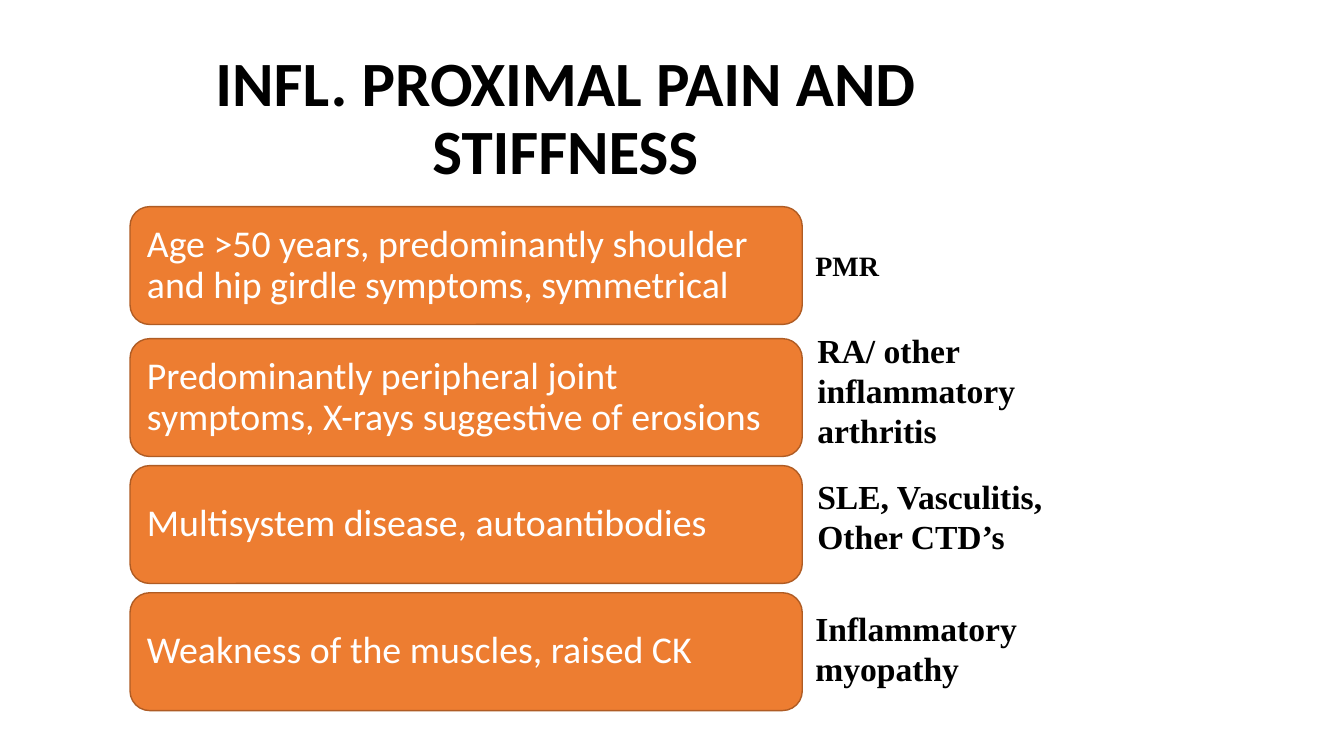
from pptx import Presentation
from pptx.dml.color import RGBColor
from pptx.enum import shapes, text
from pptx.util import Pt

COLORS = {"bar": "ED7D31", "edge": "AF5C24", "light": "FFFFFF", "dark": "000000"}

BAR_LEFT, BAR_WIDTH, BAR_HEIGHT = 92.9, 480.2, 84.2

ROWS = [
    (147.6, "Age >50 years, predominantly shoulder and hip girdle symptoms, symmetrical",
     "PMR", (575.3, 174.2, 68.4, 31.7), 20),
    (241.9, "Predominantly peripheral joint symptoms, X-rays suggestive of erosions",
     "RA/ other inflammatory arthritis", (576.7, 231.8, 182.9, 94.3), 24),
    (332.6, "Multisystem disease, autoantibodies",
     "SLE, Vasculitis, Other CTD’s", (576.7, 336.2, 204.5, 65.5), 24),
    (423.4, "Weakness of the muscles, raised CK",
     "Inflammatory myopathy", (575.3, 430.6, 194.4, 65.5), 24),
]


def color(name):
    return RGBColor.from_string(COLORS[name])


def write(frame, words, size, font_name, tint, bold):
    frame.text = words
    frame.word_wrap = True
    para = frame.paragraphs[0]
    font = para.runs[0].font
    font.size = Pt(size)
    font.name = font_name
    font.bold = bold
    font.color.rgb = color(tint)
    return para


def add_title(page, box, words):
    title = page.shapes.title
    title.left, title.top, title.width, title.height = map(Pt, box)
    para = write(title.text_frame, words, 45, "Calibri", "dark", True)
    title.text_frame.auto_size = text.MSO_AUTO_SIZE.NONE
    title.text_frame.vertical_anchor = text.MSO_ANCHOR.BOTTOM
    para.alignment = text.PP_ALIGN.CENTER
    para.line_spacing = 0.9


def add_finding(page, box, words):
    bar = page.shapes.add_shape(shapes.MSO_SHAPE.ROUNDED_RECTANGLE, *map(Pt, box))
    bar.shadow.inherit = False
    bar.fill.solid()
    bar.fill.fore_color.rgb = color("bar")
    bar.line.color.rgb = color("edge")
    bar.line.width = Pt(1)
    frame = bar.text_frame
    frame.margin_left = frame.margin_right = Pt(8)
    frame.margin_top = frame.margin_bottom = Pt(8)
    frame.vertical_anchor = text.MSO_ANCHOR.MIDDLE
    para = write(frame, words, 27, "Calibri", "light", False)
    para.alignment = text.PP_ALIGN.LEFT
    para.line_spacing = 0.9


def add_diagnosis(page, box, words, size):
    label = page.shapes.add_textbox(*map(Pt, box))
    write(label.text_frame, words, size, "Times New Roman", "dark", True)
    label.text_frame.auto_size = text.MSO_AUTO_SIZE.SHAPE_TO_FIT_TEXT


def main():
    deck = Presentation()
    deck.slide_width, deck.slide_height = Pt(960), Pt(540)
    page = deck.slides.add_slide(deck.slide_layouts[5])
    add_title(page, (56.9, 7.2, 694.1, 131), "INFL. PROXIMAL PAIN AND STIFFNESS")
    for top, finding, diagnosis, label_box, size in ROWS:
        add_finding(page, (BAR_LEFT, top, BAR_WIDTH, BAR_HEIGHT), finding)
        add_diagnosis(page, label_box, diagnosis, size)
    deck.save("out.pptx")


if __name__ == "__main__":
    main()
